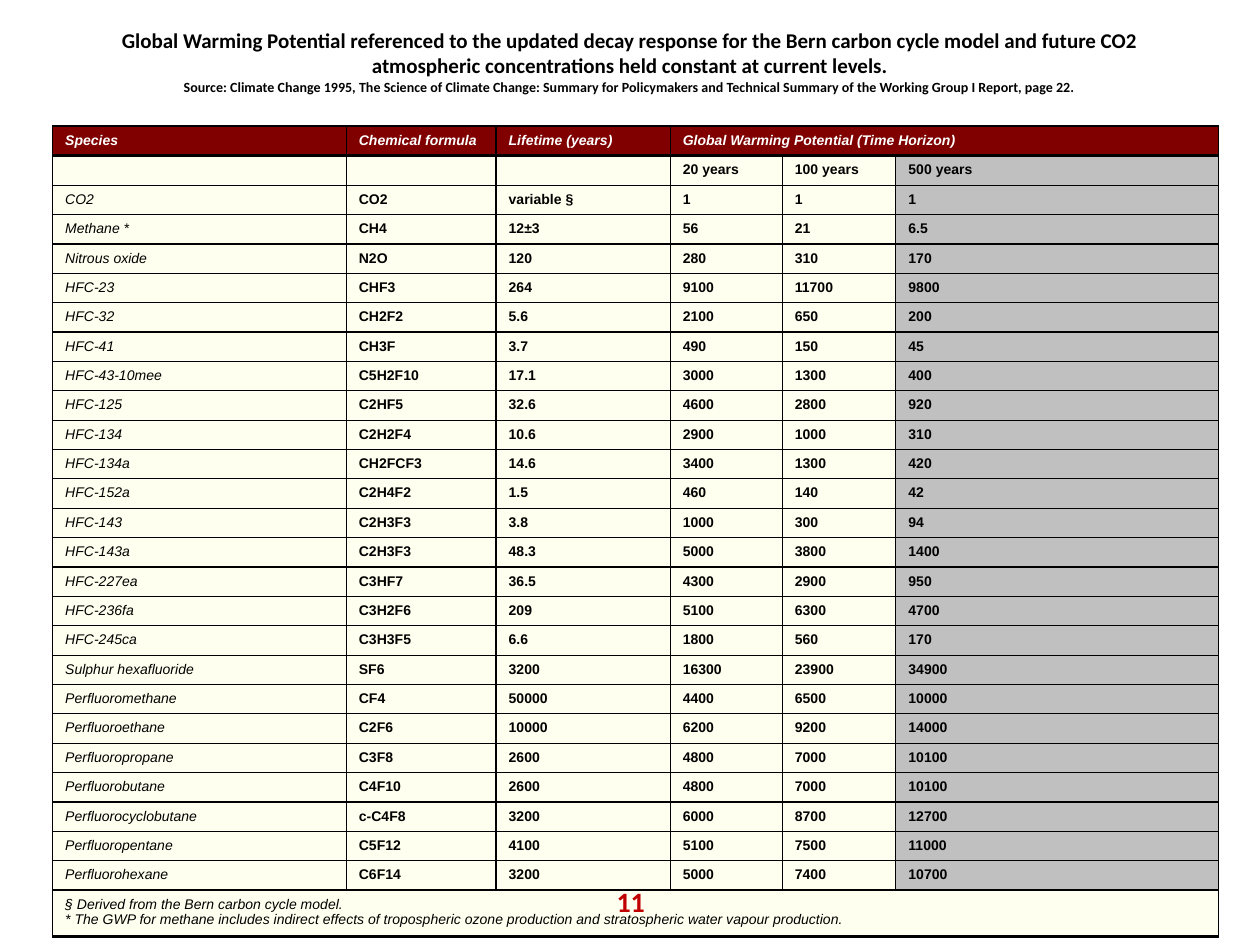
from lxml import etree
from pptx import Presentation
from pptx import util as u
from pptx.dml.color import RGBColor
from pptx.enum import text
from pptx.oxml import ns

THEME = {
    "heading_font": "Calibri", "table_font": "Arial",
    "title": 12, "small": 8, "number": 16,
    "black": "000000", "white": "FFFFFF", "maroon": "800000",
    "cream": "FFFFEF", "grey": "C0C0C0", "red": "C00000",
    "thin": 0.75, "thick": 2,
}
TITLE = ("Global Warming Potential referenced to the updated decay response for the Bern "
         "carbon cycle model and future CO2 atmospheric concentrations held constant at "
         "current levels.")
SOURCE = ("Source: Climate Change 1995, The Science of Climate Change: Summary for "
          "Policymakers and Technical Summary of the Working Group I Report, page 22.")
PAGE_NUMBER = "11"
HEADER = ("Species", "Chemical formula", "Lifetime (years)",
          "Global Warming Potential (Time Horizon)", "", "")
HORIZONS = ("", "", "", "20 years", "100 years", "500 years")
GASES = [
    ("CO2", "CO2", "variable §", "1", "1", "1"),
    ("Methane *", "CH4", "12±3", "56", "21", "6.5"),
    ("Nitrous oxide", "N2O", "120", "280", "310", "170"),
    ("HFC-23", "CHF3", "264", "9100", "11700", "9800"),
    ("HFC-32", "CH2F2", "5.6", "2100", "650", "200"),
    ("HFC-41", "CH3F", "3.7", "490", "150", "45"),
    ("HFC-43-10mee", "C5H2F10", "17.1", "3000", "1300", "400"),
    ("HFC-125", "C2HF5", "32.6", "4600", "2800", "920"),
    ("HFC-134", "C2H2F4", "10.6", "2900", "1000", "310"),
    ("HFC-134a", "CH2FCF3", "14.6", "3400", "1300", "420"),
    ("HFC-152a", "C2H4F2", "1.5", "460", "140", "42"),
    ("HFC-143", "C2H3F3", "3.8", "1000", "300", "94"),
    ("HFC-143a", "C2H3F3", "48.3", "5000", "3800", "1400"),
    ("HFC-227ea", "C3HF7", "36.5", "4300", "2900", "950"),
    ("HFC-236fa", "C3H2F6", "209", "5100", "6300", "4700"),
    ("HFC-245ca", "C3H3F5", "6.6", "1800", "560", "170"),
    ("Sulphur hexafluoride", "SF6", "3200", "16300", "23900", "34900"),
    ("Perfluoromethane", "CF4", "50000", "4400", "6500", "10000"),
    ("Perfluoroethane", "C2F6", "10000", "6200", "9200", "14000"),
    ("Perfluoropropane", "C3F8", "2600", "4800", "7000", "10100"),
    ("Perfluorobutane", "C4F10", "2600", "4800", "7000", "10100"),
    ("Perfluorocyclobutane", "c-C4F8", "3200", "6000", "8700", "12700"),
    ("Perfluoropentane", "C5F12", "4100", "5100", "7500", "11000"),
    ("Perfluorohexane", "C6F14", "3200", "5000", "7400", "10700"),
]
NOTES = ("§ Derived from the Bern carbon cycle model.",
         "* The GWP for methane includes indirect effects of tropospheric ozone production "
         "and stratospheric water vapour production.")
COLUMN_WIDTHS = (5.92, 3.02, 3.51, 2.26, 2.29, 6.5)
GAS_BLOCK_HEIGHT, NOTES_HEIGHT = 15.4, 0.94


def write(para, words, font=THEME["table_font"], size=THEME["small"],
          color=THEME["black"], bold=True, italic=False):
    span = para.add_run()
    span.text = words
    span.font.name = font
    span.font.size = u.Pt(size)
    span.font.bold = bold
    span.font.italic = italic
    span.font.color.rgb = RGBColor.from_string(color)


def set_borders(cell, top, bottom):
    """Draw black cell edges; the sides are always thin."""
    widths = {"lnL": THEME["thin"], "lnR": THEME["thin"], "lnT": top, "lnB": bottom}
    properties = cell._tc.get_or_add_tcPr()
    for place, (tag, width) in enumerate(widths.items()):
        line = etree.Element(ns.qn(f"a:{tag}"), w=str(u.Pt(width)))
        fill = etree.SubElement(line, ns.qn("a:solidFill"))
        etree.SubElement(fill, ns.qn("a:srgbClr"), val=THEME["black"])
        properties.insert(place, line)


def fill_cell(cell, words, row, column, last_row):
    heading, notes = row == 0, row == last_row
    grey = column == 5 and not heading and not notes
    fill = THEME["maroon"] if heading else THEME["grey"] if grey else THEME["cream"]
    cell.fill.solid()
    cell.fill.fore_color.rgb = RGBColor.from_string(fill)
    set_borders(cell, top=THEME["thick"] if row == 1 else THEME["thin"],
                bottom=THEME["thick"] if heading or notes else THEME["thin"])
    frame = cell.text_frame
    for index, line in enumerate(words.split("\n")):
        para = frame.add_paragraph() if index else frame.paragraphs[0]
        if line:
            write(para, line, color=THEME["white"] if heading else THEME["black"],
                  bold=heading or column > 0, italic=heading or column == 0)
        else:
            etree.SubElement(para._p, ns.qn("a:endParaRPr"), sz=str(THEME["small"] * 100))


def add_title(page):
    box = page.shapes.title
    box.left, box.top, box.width, box.height = map(u.Cm, (1.27, 0.43, 22.86, 1.9))
    frame = box.text_frame
    frame.auto_size = text.MSO_AUTO_SIZE.NONE
    frame.vertical_anchor = text.MSO_ANCHOR.TOP
    para = frame.paragraphs[0]
    para.alignment = text.PP_ALIGN.CENTER
    write(para, TITLE, font=THEME["heading_font"], size=THEME["title"])
    para.add_line_break()
    write(para, SOURCE, font=THEME["heading_font"])


def add_gas_table(page):
    rows = [HEADER, HORIZONS, *GASES, ("\n".join(NOTES), "", "", "", "", "")]
    last_row = len(rows) - 1
    table = page.shapes.add_table(
        len(rows), len(HEADER), u.Cm(1.06), u.Cm(2.54),
        u.Cm(sum(COLUMN_WIDTHS)), u.Cm(GAS_BLOCK_HEIGHT + NOTES_HEIGHT)).table
    for column, width in zip(table.columns, COLUMN_WIDTHS):
        column.width = u.Cm(width)
    for row in table.rows:
        row.height = u.Cm(GAS_BLOCK_HEIGHT / last_row)
    table.rows[last_row].height = u.Cm(NOTES_HEIGHT)
    for r, values in enumerate(rows):
        for c, words in enumerate(values):
            fill_cell(table.cell(r, c), words, r, c, last_row)
    table.cell(0, 3).merge(table.cell(0, 5))
    table.cell(last_row, 0).merge(table.cell(last_row, 5))


def add_page_number(page):
    box = page.shapes.add_textbox(*map(u.Cm, (8.69, 17.65, 8.05, 1.02)))
    frame = box.text_frame
    frame.word_wrap = True
    frame.vertical_anchor = text.MSO_ANCHOR.MIDDLE
    para = frame.paragraphs[0]
    para.alignment = text.PP_ALIGN.CENTER
    write(para, PAGE_NUMBER, font=THEME["heading_font"], size=THEME["number"],
          color=THEME["red"])


def main():
    deck = Presentation()
    deck.slide_width, deck.slide_height = u.Cm(25.4), u.Cm(19.05)
    page = deck.slides.add_slide(deck.slide_layouts[5])
    add_title(page)
    add_gas_table(page)
    add_page_number(page)
    deck.save("out.pptx")


if __name__ == "__main__":
    main()
